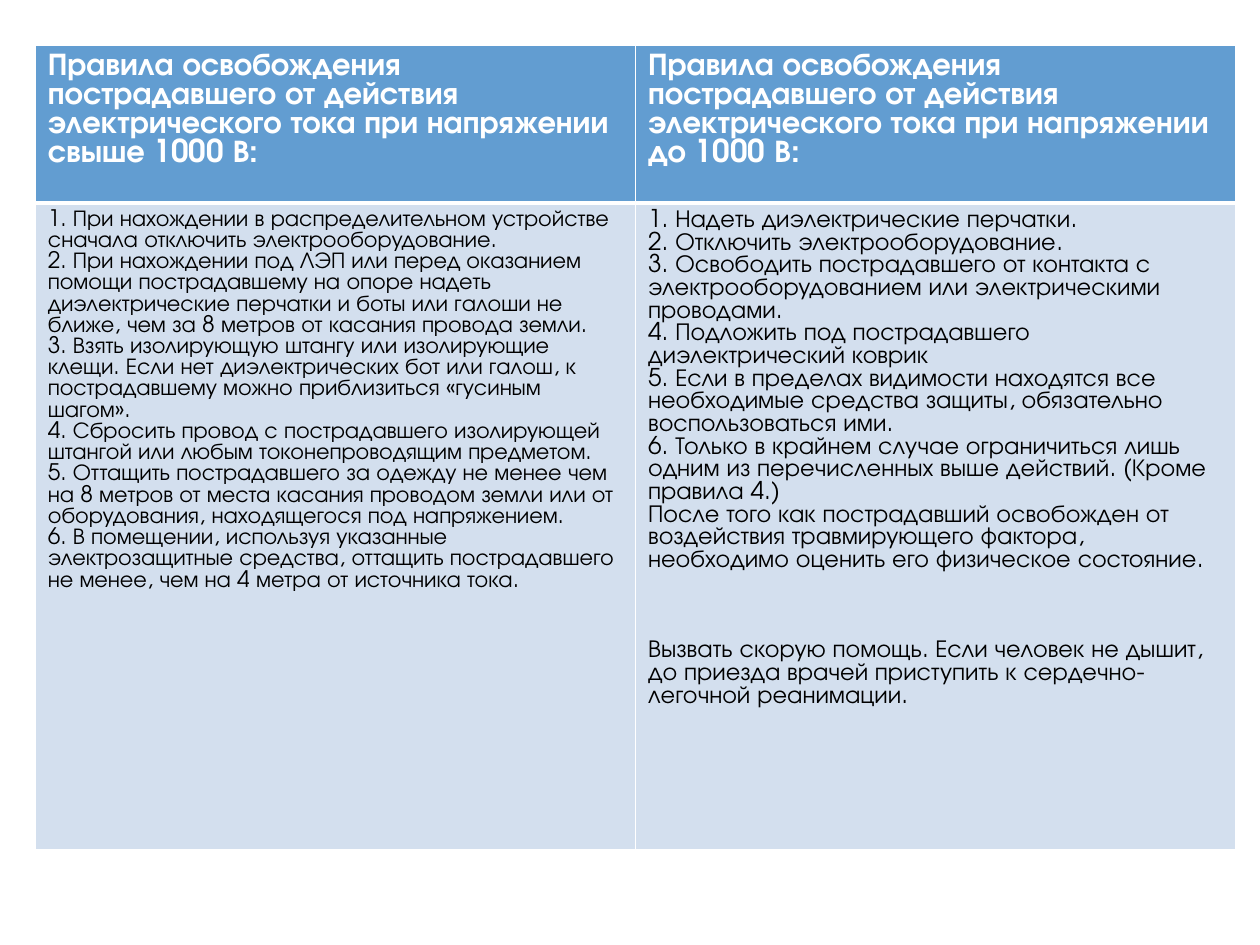
from lxml.etree import SubElement
from pptx import Presentation
from pptx.dml.color import RGBColor as Color
from pptx.oxml.ns import qn
from pptx.util import Pt

FONT = "TeX Gyre Adventor"
COLORS = {"header": "629DD1", "body": "D3DFEE", "white": "FFFFFF", "black": "000000"}

COLUMNS = [
    {
        "title": "Правила освобождения пострадавшего от действия электрического тока "
                 "при напряжении свыше 1000 В:",
        "size": 13,
        "rules": [
            "1. При нахождении в распределительном устройстве сначала отключить "
            "электрооборудование.",
            "2. При нахождении под ЛЭП или перед оказанием помощи пострадавшему на опоре "
            "надеть диэлектрические перчатки и боты или галоши не ближе, чем за 8 метров "
            "от касания провода земли.",
            "3. Взять изолирующую штангу или изолирующие клещи. Если нет диэлектрических "
            "бот или галош, к пострадавшему можно приблизиться «гусиным шагом».",
            "4. Сбросить провод с пострадавшего изолирующей штангой или любым "
            "токонепроводящим предметом.",
            "5. Оттащить пострадавшего за одежду не менее чем на 8 метров от места касания "
            "проводом земли или от оборудования, находящегося под напряжением.",
            "6. В помещении, используя указанные электрозащитные средства, оттащить "
            "пострадавшего не менее, чем на 4 метра от источника тока.",
        ],
        "closing": [],
    },
    {
        "title": "Правила освобождения пострадавшего от действия электрического тока "
                 "при напряжении до 1000 В:",
        "size": 14,
        "rules": [
            "1. Надеть диэлектрические перчатки.",
            "2. Отключить электрооборудование.",
            "3. Освободить пострадавшего от контакта с электрооборудованием или "
            "электрическими проводами.",
            "4. Подложить под пострадавшего диэлектрический коврик",
            "5. Если в пределах видимости находятся все необходимые средства защиты, "
            "обязательно воспользоваться ими.",
            "6. Только в крайнем случае ограничиться лишь одним из перечисленных выше "
            "действий. (Кроме правила 4.)",
            "После того как пострадавший освобожден от воздействия травмирующего фактора, "
            "необходимо оценить его физическое состояние.",
        ],
        "closing": [
            "Вызвать скорую помощь. Если человек не дышит, до приезда врачей приступить "
            "к сердечно-легочной реанимации.",
        ],
    },
]

LEFT, TOP, COLUMN_WIDTH = 20.16, 26, 343
ROW_HEIGHTS = [90, 369.5]
TABLE_HEIGHT = 495.4
CLOSING_GAP = 38.8
THIN, THICK = 1, 3


def write(cell, lines, size, color, bold=False, gaps=None):
    """Fill a cell with one paragraph a line; gaps maps a line number to space before."""
    frame = cell.text_frame
    for number, line in enumerate(lines):
        para = frame.add_paragraph() if number else frame.paragraphs[0]
        para.space_before = Pt((gaps or {}).get(number, 0))
        span = para.add_run()
        span.text = line
        span.font.name, span.font.size, span.font.bold = FONT, Pt(size), bold
        span.font.color.rgb = Color.from_string(COLORS[color])


def paint(cell, fill, top, bottom):
    """Give a cell white borders and a solid fill."""
    properties = cell._tc.get_or_add_tcPr()
    for side, width in (("L", THIN), ("R", THIN), ("T", top), ("B", bottom)):
        line = SubElement(properties, qn(f"a:ln{side}"), w=str(Pt(width)))
        SubElement(SubElement(line, qn("a:solidFill")), qn("a:srgbClr"), val=COLORS["white"])
    cell.fill.solid()
    cell.fill.fore_color.rgb = Color.from_string(COLORS[fill])


def main():
    deck = Presentation()
    deck.slide_width, deck.slide_height = Pt(720), Pt(540)
    page = deck.slides.add_slide(deck.slide_layouts[6])

    holder = page.shapes.add_table(
        len(ROW_HEIGHTS), len(COLUMNS), Pt(LEFT), Pt(TOP),
        Pt(COLUMN_WIDTH * len(COLUMNS)), Pt(TABLE_HEIGHT))
    table = holder.table
    for row, height in zip(table.rows, ROW_HEIGHTS):
        row.height = Pt(height)
    holder.height = Pt(TABLE_HEIGHT)

    for index, column in enumerate(COLUMNS):
        header, body = table.cell(0, index), table.cell(1, index)
        paint(header, "header", THIN, THICK)
        paint(body, "body", THICK, THIN)
        write(header, [column["title"]], 18, "white", bold=True)
        rules = column["rules"]
        write(body, rules + column["closing"], column["size"], "black",
              gaps={len(rules): CLOSING_GAP})

    deck.save("out.pptx")


if __name__ == "__main__":
    main()
